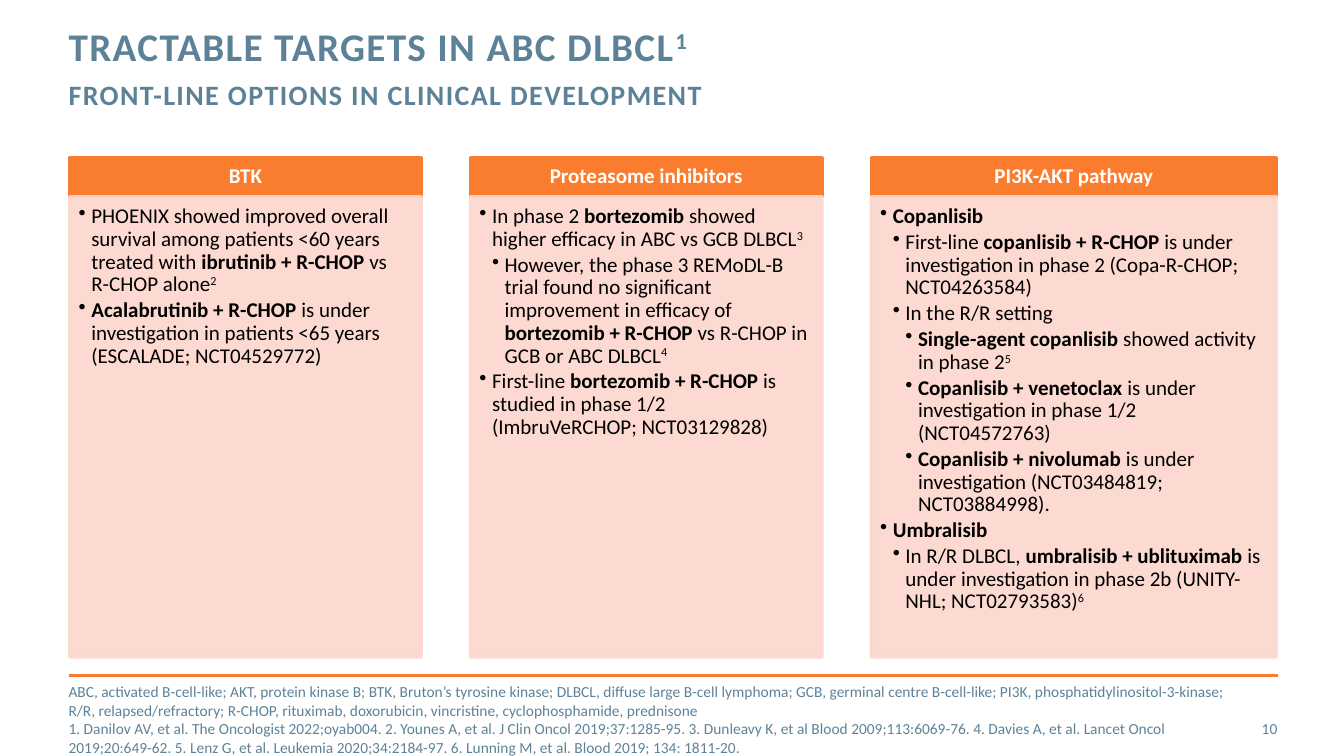
import copy
from dataclasses import dataclass

import pptx
import pptx.dml.color
import pptx.enum.shapes
import pptx.enum.text
import pptx.oxml.ns
import pptx.oxml.xmlchemy
import pptx.util

TITLE = "TRACTABLE TARGETS IN ABC DLBCL^1^"
SUBTITLE = "FRONT-LINE OPTIONS IN CLINICAL DEVELOPMENT"
COLUMNS = [
    ("BTK", 3.49, [
        (1, "PHOENIX showed improved overall survival among patients <60 years treated with *ibrutinib + R-CHOP *vs R-CHOP alone^2^"),
        (1, "*Acalabrutinib + R-CHOP *is under investigation in patients <65 years (ESCALADE; NCT04529772)"),
    ]),
    ("Proteasome inhibitors", 3.49, [
        (1, "In phase 2 *bortezomib* showed higher efficacy in ABC vs GCB DLBCL^3^"),
        (2, "However, the phase 3 REMoDL-B trial found no significant improvement in efficacy of *bortezomib + R-CHOP* vs R-CHOP in GCB or ABC DLBCL^4^"),
        (1, "First-line *bortezomib + R-CHOP *is studied in phase 1/2 (ImbruVeRCHOP; NCT03129828)"),
    ]),
    ("PI3K-AKT pathway", 4.02, [
        (1, "*Copanlisib*"),
        (2, "First-line *copanlisib + R-CHOP *is under investigation in phase 2 (Copa-R-CHOP; NCT04263584)"),
        (2, "In the R/R setting"),
        (3, "*Single-agent copanlisib* showed activity in phase 2^5^"),
        (3, "*Copanlisib + venetoclax *is under investigation in phase 1/2 (NCT04572763)"),
        (3, "*Copanlisib + nivolumab *is under investigation (NCT03484819; NCT03884998)."),
        (1, "*Umbralisib*"),
        (2, "In R/R DLBCL, *umbralisib + ublituximab *is under investigation in phase 2b (UNITY-NHL; NCT02793583)^6^"),
    ]),
]
ABBREVIATIONS = "ABC, activated B-cell-like; AKT, protein kinase B; BTK, Bruton’s tyrosine kinase; DLBCL, diffuse large B-cell lymphoma; GCB, germinal centre B-cell-like; PI3K, phosphatidylinositol-3-kinase; R/R, relapsed/refractory; R-CHOP, rituximab, doxorubicin, vincristine, cyclophosphamide, prednisone"
REFERENCES = "1. Danilov AV, et al. The Oncologist 2022;oyab004. 2. Younes A, et al. J Clin Oncol 2019;37:1285-95. 3. Dunleavy K, et al Blood 2009;113:6069-76. 4. Davies A, et al. Lancet Oncol 2019;20:649-62. 5. Lenz G, et al. Leukemia 2020;34:2184-97. 6. Lunning M, et al. Blood 2019; 134: 1811-20."
PAGE = "10"


@dataclass(frozen=True)
class Theme:
    font: str = "Calibri"
    accent: str = "FA7C2E"
    panel: str = "FDD7CD"
    slate: str = "5D8298"
    black: str = "000000"
    white: str = "FFFFFF"
    title: int = 28
    subtitle: int = 20
    body: int = 15
    note: int = 11
    rule: int = 2


T = Theme()
Inches, Pt = pptx.util.Inches, pptx.util.Pt
PP = pptx.enum.text.PP_ALIGN
ANCHOR = pptx.enum.text.MSO_ANCHOR
RGB = pptx.dml.color.RGBColor.from_string
qn = pptx.oxml.ns.qn
new_element = pptx.oxml.xmlchemy.OxmlElement

LEFT, RIGHT = 0.68, 12.68
PANEL_LEFT, PITCH = 0.69, 7.95 / 2
HEAD_TOP, HEAD_H, PANEL_H = 1.56, 0.39, 4.57
INDENT = 1 / 8


def apply(target, values):
    for name, value in values.items():
        setattr(target, name, value)


def add_text(p, text, size, color, bold=False, spacing=None):
    for i, part in enumerate(text.split("*")):
        for j, piece in enumerate(part.split("^")):
            if not piece:
                continue
            r = p.add_run()
            r.text = piece
            apply(r.font, {"name": T.font, "size": Pt(size), "bold": bold or i % 2 == 1})
            r.font.color.rgb = RGB(color)
            rPr = r.font._element
            if j % 2:
                rPr.set("baseline", "30000")
            if spacing:
                rPr.set("spc", str(spacing))


def add_break(p):
    last = p.runs[-1].font._element
    p.add_line_break()
    p._p.findall(qn("a:br"))[-1].append(copy.deepcopy(last))


def set_frame(sp, insets=(0, 0, 0, 0), anchor=ANCHOR.TOP):
    tf = sp.text_frame
    sides = ("margin_left", "margin_top", "margin_right", "margin_bottom")
    apply(tf, {"word_wrap": True, "auto_size": pptx.enum.text.MSO_AUTO_SIZE.NONE,
               "vertical_anchor": anchor})
    apply(tf, dict(zip(sides, map(Inches, insets))))
    return tf


def place(sp, *box):
    apply(sp, dict(zip(("left", "top", "width", "height"), map(Inches, box))))


def set_bullet(p, level, char=None):
    pPr = p._p.get_or_add_pPr()
    pPr.set("marL", str(int(Inches(INDENT * level))))
    pPr.set("indent", str(-int(Inches(INDENT)) if char else 0))
    bullet = new_element("a:buChar" if char else "a:buNone")
    if char:
        bullet.set("char", char)
    pPr.append(bullet)


def add_box(s, box, color, alpha=None):
    sp = s.shapes.add_shape(pptx.enum.shapes.MSO_SHAPE.RECTANGLE, *map(Inches, box))
    sp.shadow.inherit = False
    sp.fill.solid()
    sp.fill.fore_color.rgb = RGB(color)
    sp.line.color.rgb = RGB(color)
    sp.line.width = Pt(T.rule)
    if alpha:
        for clr in sp._element.spPr.findall(".//" + qn("a:srgbClr")):
            node = new_element("a:alpha")
            node.set("val", str(alpha * 1000))
            clr.append(node)
    return sp


def add_column(s, left, heading, width, points):
    head = add_box(s, (left, HEAD_TOP, width, HEAD_H), T.accent)
    p = set_frame(head, (0.12, 0.07, 0.12, 0.07), ANCHOR.MIDDLE).paragraphs[0]
    apply(p, {"alignment": PP.CENTER, "line_spacing": 0.9})
    add_text(p, heading, T.body, T.white, bold=True)

    panel = add_box(s, (left, HEAD_TOP + HEAD_H, width, PANEL_H), T.panel, 90)
    tf = set_frame(panel, (0.09, 0.09, 0.12, 0.13))
    for i, (level, text) in enumerate(points):
        p = tf.add_paragraph() if i else tf.paragraphs[0]
        set_bullet(p, level, "•")
        apply(p, {"level": level, "alignment": PP.LEFT, "line_spacing": 0.9,
                  "space_before": Pt(0), "space_after": Pt(2.25)})
        add_text(p, text, T.body, T.black)


def main():
    prs = pptx.Presentation()
    apply(prs, {"slide_width": Inches(13.33), "slide_height": Inches(7.5)})
    s = prs.slides.add_slide(prs.slide_layouts[1])

    rule = s.shapes.add_connector(pptx.enum.shapes.MSO_CONNECTOR.STRAIGHT,
                                  Inches(LEFT), Inches(6.7), Inches(RIGHT), Inches(6.7))
    rule.line.color.rgb = RGB(T.accent)
    rule.line.width = Pt(T.rule)
    rule._element.spPr.append(new_element("a:effectLst"))

    for i, column in enumerate(COLUMNS):
        add_column(s, PANEL_LEFT + i * PITCH, *column)

    title = s.shapes.title
    place(title, LEFT, 0.27, 9.56, 0.88)
    p = set_frame(title).paragraphs[0]
    apply(p, {"alignment": PP.LEFT, "line_spacing": Pt(30)})
    add_text(p, TITLE, T.title, T.slate, True, 100)
    add_break(p)
    add_text(p, SUBTITLE, T.subtitle, T.slate, True, 100)

    notes = s.placeholders[1]
    place(notes, LEFT, 6.77, 11.69, 0.4)
    p = set_frame(notes).paragraphs[0]
    set_bullet(p, 0)
    apply(p, {"alignment": PP.LEFT, "space_before": Pt(0)})
    add_text(p, ABBREVIATIONS, T.note, T.slate)
    add_break(p)
    add_text(p, REFERENCES, T.note, T.slate)

    page = s.shapes.add_textbox(*map(Inches, (11.81, 7.03, 0.86, 0.4)))
    p = set_frame(page, anchor=ANCHOR.MIDDLE).paragraphs[0]
    p.alignment = PP.RIGHT
    add_text(p, PAGE, T.note, T.slate)

    prs.save("out.pptx")


if __name__ == "__main__":
    main()
